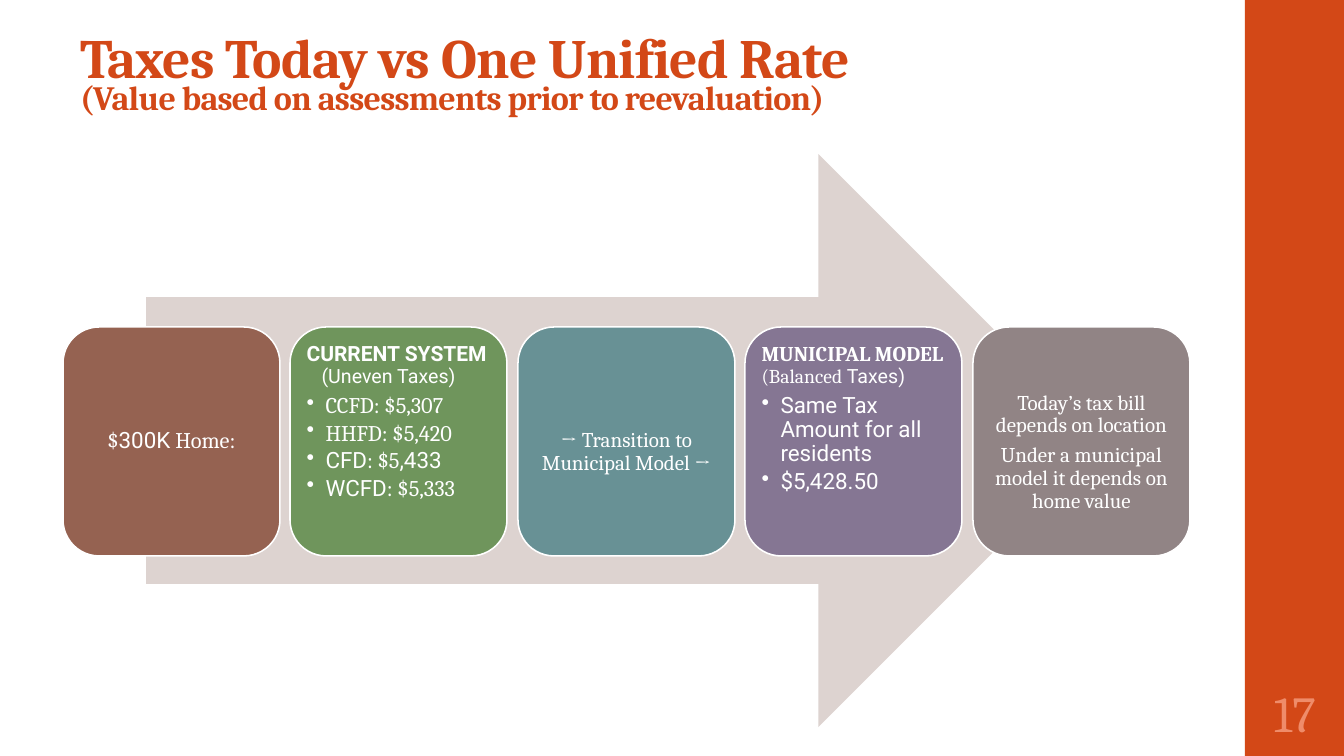
from dataclasses import dataclass

from lxml import etree
from pptx import Presentation
from pptx import util as u
from pptx.dml.color import RGBColor
from pptx.enum import shapes, text
from pptx.oxml.ns import qn

EMU_PER_PX = 914400 / 100.8
LEFT, CENTER = text.PP_ALIGN.LEFT, text.PP_ALIGN.CENTER
TOP, MIDDLE, BOTTOM = (text.MSO_ANCHOR.TOP, text.MSO_ANCHOR.MIDDLE,
                       text.MSO_ANCHOR.BOTTOM)


@dataclass(frozen=True)
class Theme:
    serif: str = "Cambria"
    sans: str = "Roboto"
    accent: str = "D34817"
    page_number: str = "EF8C6A"
    arrow: str = "DDD3D0"
    white: str = "FFFFFF"
    brown: str = "956251"
    green: str = "6F955C"
    teal: str = "689195"
    purple: str = "857693"
    gray: str = "918485"
    title_size: float = 39.6
    subtitle_size: float = 24.3
    number_size: int = 36
    item_size: int = 16
    body_size: int = 15
    note_size: int = 14


def px(n):
    return u.Emu(round(n * EMU_PER_PX))


def write(tf, *runs, size, color, bold=False, align=LEFT, line=0.9, after=0,
          indent=0, bullet=False, tracking=0):
    """Add one paragraph made of (text, font) runs."""
    first = tf.paragraphs[0]
    p = tf.add_paragraph() if first.runs else first
    pPr = p._p.get_or_add_pPr()
    pPr.set("marL", str(px(indent)))
    pPr.set("indent", str(-px(indent) if bullet else 0))
    if bullet:
        etree.SubElement(pPr, qn("a:buChar")).set("char", "•")
    p.alignment, p.line_spacing = align, line
    p.space_before, p.space_after = u.Pt(0), u.Pt(after)
    for words, font in runs:
        r = p.add_run()
        r.text = words
        r.font.name, r.font.size, r.font.bold = font, u.Pt(size), bold
        r.font.color.rgb = RGBColor.from_string(color)
        if tracking:
            r._r.get_or_add_rPr().set("spc", str(round(tracking * 100)))


def set_frame(tf, anchor, left, top, right, bottom):
    tf.word_wrap = True
    tf.auto_size = text.MSO_AUTO_SIZE.NONE
    tf.vertical_anchor = anchor
    tf.margin_left, tf.margin_top = px(left), px(top)
    tf.margin_right, tf.margin_bottom = px(right), px(bottom)


class Deck:
    def __init__(self, theme):
        self.theme = theme
        self.prs = Presentation()
        self.prs.slide_width, self.prs.slide_height = px(1344), px(756)
        self.s = self.prs.slides.add_slide(self.prs.slide_layouts[5])

    def shape(self, kind, x, y, w, h, fill, outline=None):
        sp = self.s.shapes.add_shape(kind, px(x), px(y), px(w), px(h))
        sp.shadow.inherit = False
        sp.fill.solid()
        sp.fill.fore_color.rgb = RGBColor.from_string(fill)
        if outline:
            sp.line.color.rgb = RGBColor.from_string(outline)
            sp.line.width = u.Pt(1.1)
        else:
            sp.line.fill.background()
        return sp

    def title(self, heading, subheading):
        t = self.theme
        sp = self.s.shapes.title
        sp.left, sp.top, sp.width, sp.height = px(70), px(28), px(1146), px(93)
        set_frame(sp.text_frame, BOTTOM, 10, 3, 10, 5)
        for words, size in ((heading, t.title_size), (subheading, t.subtitle_size)):
            write(sp.text_frame, (words, t.serif), size=size, color=t.accent,
                  bold=True, line=0.7, tracking=-0.5)

    def page_number(self, number):
        t = self.theme
        tf = self.s.shapes.add_textbox(px(1245), px(680), px(100), px(65)).text_frame
        set_frame(tf, MIDDLE, 10, 5, 10, 5)
        write(tf, (number, t.serif), size=t.number_size, color=t.page_number,
              align=CENTER, line=1, after=6)

    def card(self, index, fill, paragraphs, anchor=MIDDLE, drop=0):
        """Add the card at this place in the row; drop lowers its text area."""
        x = 63 + 455 * index // 2
        sp = self.shape(shapes.MSO_SHAPE.ROUNDED_RECTANGLE, x, 327, 217, 229,
                        fill, self.theme.white)
        set_frame(sp.text_frame, anchor, 6, 6 + drop, 6, 6)
        for runs, style in paragraphs:
            write(sp.text_frame, *runs, color=self.theme.white, **style)


def main():
    t = Theme()
    serif, sans = t.serif, t.sans
    deck = Deck(t)
    deck.shape(shapes.MSO_SHAPE.RECTANGLE, 1245, 0, 99, 756, t.accent)
    deck.page_number("17")
    deck.shape(shapes.MSO_SHAPE.RIGHT_ARROW, 146, 154, 959, 573, t.arrow)
    deck.title("Taxes Today vs One Unified Rate",
               "(Value based on assessments prior to reevaluation)")

    amount = dict(size=t.item_size, align=CENTER, after=5.6)
    centered = dict(size=t.body_size, align=CENTER, after=5.25)
    heading = dict(size=t.body_size, bold=True)
    note = dict(size=t.note_size, after=4.9)
    item = dict(size=t.item_size, indent=19, bullet=True, after=2.4)

    deck.card(0, t.brown, [
        ([("$", serif), ("300K", sans), (" Home:", serif)], amount),
    ])
    deck.card(1, t.green, [
        ([("CURRENT SYSTEM", sans)], heading),
        ([("(Uneven Taxes)", sans)], dict(note, indent=15)),
        ([("CCFD: $5,307", serif)], item),
        ([("HHFD: $5,420", serif)], item),
        ([("CFD", sans), (": $5", serif), (",433", sans)], item),
        ([("WCFD", sans), (": $5,333", serif)], item),
    ], anchor=TOP)
    deck.card(2, t.teal, [
        ([("→ Transition to Municipal Model →", serif)], centered),
    ], drop=22)
    deck.card(3, t.purple, [
        ([("MUNICIPAL MODEL", serif)], heading),
        ([("(Balanced", serif), (" Taxes)", sans)], note),
        ([("Same Tax Amount for all residents", sans)], item),
        ([("$5,428.50", sans)], item),
    ], anchor=TOP)
    deck.card(4, t.gray, [
        ([("Today’s tax bill depends on location", serif)], centered),
        ([("Under a municipal model it depends on home value", serif)], centered),
    ], drop=22)
    deck.prs.save("out.pptx")


if __name__ == "__main__":
    main()
